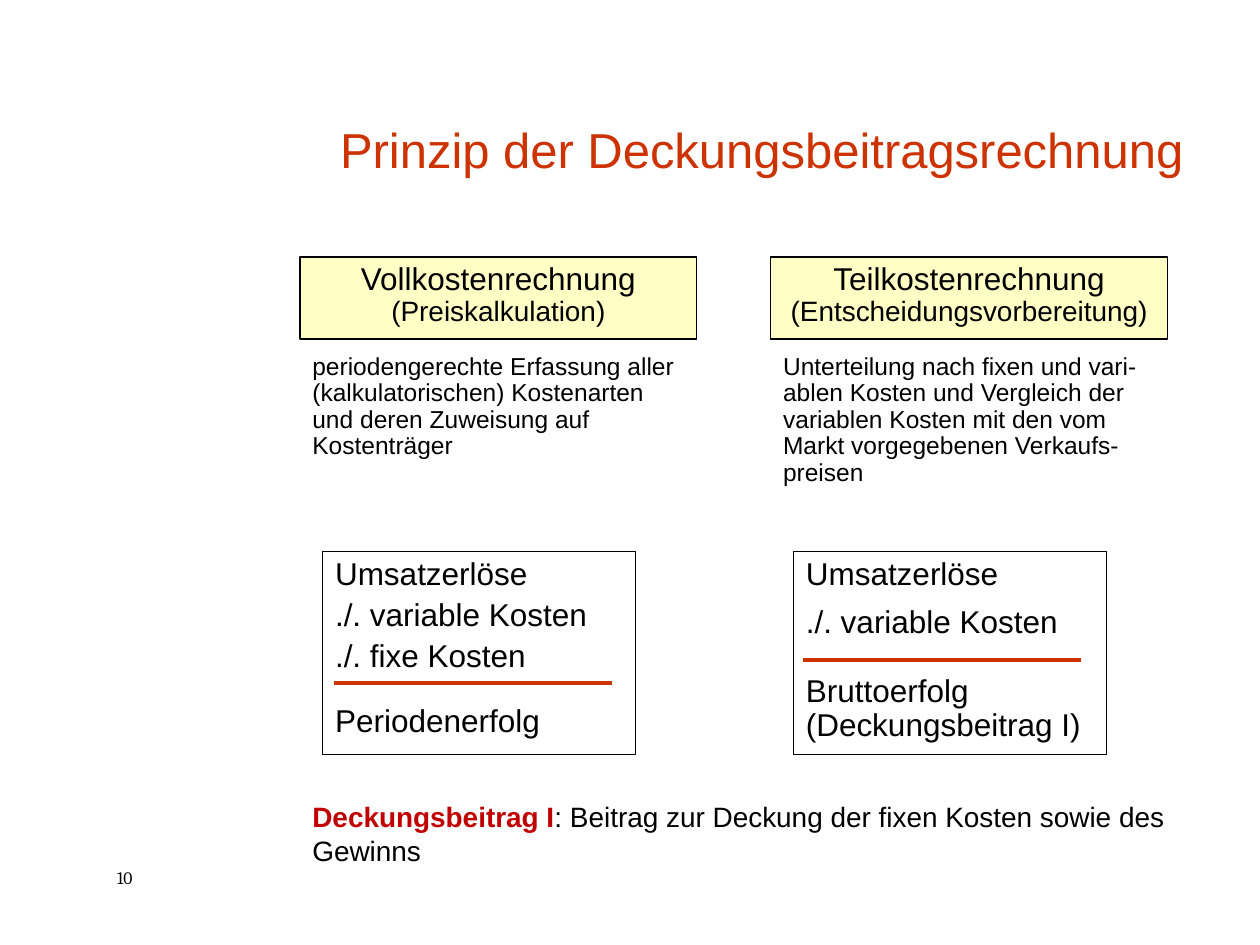
import pptx
import pptx.util
import pptx.dml.color
import pptx.enum.shapes
import pptx.enum.text
import lxml.etree
from dataclasses import dataclass

Pt = pptx.util.Pt
ALIGN = pptx.enum.text.PP_ALIGN
ANCHOR = pptx.enum.text.MSO_ANCHOR


@dataclass(frozen=True)
class Theme:
    font: str = "Arial"
    number_font: str = "Cambria"
    black: str = "000000"
    accent: str = "CC3300"
    term: str = "C00000"
    header_fill: str = "FFFFC5"
    title_size: int = 28
    large: int = 18
    medium: int = 16
    body: int = 14
    small: int = 10


THEME = Theme()

# Content
TITLE = "Prinzip der Deckungsbeitragsrechnung"
PAGE_NUMBER = "10"
COLUMNS = [
    {
        "heading": "Vollkostenrechnung",
        "purpose": "(Preiskalkulation)",
        "description": "periodengerechte Erfassung aller (kalkulatorischen) Kostenarten "
                       "und deren Zuweisung auf Kostenträger",
        "scheme": ["Umsatzerlöse", "./. variable Kosten", "./. fixe Kosten", "Periodenerfolg"],
        "gaps": [0, 4.2, 4.2, 17.4],
        "rule_left": 190.8, "rule_top": 390.2,
    },
    {
        "heading": "Teilkostenrechnung",
        "purpose": "(Entscheidungsvorbereitung)",
        "description": "Unterteilung nach fixen und vari-ablen Kosten und Vergleich der "
                       "variablen Kosten mit den vom Markt vorgegebenen Verkaufs-preisen",
        "scheme": ["Umsatzerlöse", "./. variable Kosten", "Bruttoerfolg (Deckungsbeitrag I)"],
        "gaps": [0, 8.3, 19.7],
        "rule_left": 458.8, "rule_top": 377.3,
    },
]
TERM = "Deckungsbeitrag I"
DEFINITION = ": Beitrag zur Deckung der fixen Kosten sowie des Gewinns"

# Column grid
COLUMN_LEFT, COLUMN_STEP, COLUMN_WIDTH = 171.4, 269, 226.8
SCHEME_INDENT, SCHEME_WIDTH, RULE_WIDTH = 13, 178.8, 159


def color(value):
    return pptx.dml.color.RGBColor.from_string(value)


def write(shape, paragraphs, size=THEME.body, font=THEME.font, align=ALIGN.LEFT,
          anchor=ANCHOR.TOP, line_spacing=1.0, gaps=None):
    """Each paragraph is a string or a list of (text, format) runs; "\\n" breaks a line."""
    frame = shape.text_frame
    frame.word_wrap = True
    frame.vertical_anchor = anchor
    frame.margin_left = frame.margin_right = Pt(7.2)
    frame.margin_top = frame.margin_bottom = Pt(3.6)
    for index, runs in enumerate(paragraphs):
        paragraph = frame.paragraphs[0] if index == 0 else frame.add_paragraph()
        paragraph.alignment = align
        paragraph.line_spacing = line_spacing
        paragraph.space_before = Pt(gaps[index] if gaps else 0)
        for text, style in [(runs, {})] if isinstance(runs, str) else runs:
            if text == "\n":
                paragraph.add_line_break()
                continue
            run = paragraph.add_run()
            run.text = text
            run.font.name = font
            run.font.size = Pt(style.get("size", size))
            run.font.bold = style.get("bold", False)
            run.font.color.rgb = color(style.get("color", THEME.black))


def add_text(slide, box, paragraphs, **style):
    write(slide.shapes.add_textbox(*map(Pt, box)), paragraphs, **style)


def add_box(slide, box, paragraphs, fill=None, **style):
    shape = slide.shapes.add_shape(pptx.enum.shapes.MSO_SHAPE.RECTANGLE, *map(Pt, box))
    shape.shadow.inherit = False
    if fill:
        shape.fill.solid()
        shape.fill.fore_color.rgb = color(fill)
    else:
        shape.fill.background()
    shape.line.color.rgb = color(THEME.black)
    shape.line.width = Pt(0.75)
    write(shape, paragraphs, **style)


def add_rule(slide, left, top):
    rule = slide.shapes.add_connector(
        pptx.enum.shapes.MSO_CONNECTOR.STRAIGHT, Pt(left), Pt(top), Pt(left + RULE_WIDTH), Pt(top))
    rule.line.color.rgb = color(THEME.accent)
    rule.line.width = Pt(2)
    properties = rule.line._get_or_add_ln().getparent()
    lxml.etree.SubElement(properties, pptx.oxml.ns.qn("a:effectLst"))


def add_column(slide, column, left):
    heading = [(column["heading"], {"size": THEME.large}), ("\n", {}), (column["purpose"], {})]
    add_box(slide, (left, 146.9, COLUMN_WIDTH, 46.8), [heading], fill=THEME.header_fill,
            size=THEME.medium, align=ALIGN.CENTER, line_spacing=0.9)
    add_text(slide, (left, 198.7, COLUMN_WIDTH, 108.7), [column["description"]],
             line_spacing=0.9)
    add_box(slide, (left + SCHEME_INDENT, 315.3, SCHEME_WIDTH, 116), column["scheme"],
            size=THEME.large, line_spacing=0.9, gaps=column["gaps"])
    add_rule(slide, column["rule_left"], column["rule_top"])


def main():
    presentation = pptx.Presentation()
    presentation.slide_width, presentation.slide_height = Pt(720), Pt(540)
    slide = presentation.slides.add_slide(presentation.slide_layouts[5])

    # Title
    title = slide.shapes.title
    title.left, title.top, title.width, title.height = map(Pt, (150.5, 30.2, 532.8, 75.6))
    write(title, [[(TITLE, {"color": THEME.accent})]], size=THEME.title_size,
          align=ALIGN.RIGHT, anchor=ANCHOR.BOTTOM)

    # Two costing methods side by side
    for index, column in enumerate(COLUMNS):
        add_column(slide, column, COLUMN_LEFT + index * COLUMN_STEP)

    # Definition and page number
    add_text(slide, (COLUMN_LEFT, 453.6, 519, 46),
             [[(TERM, {"bold": True, "color": THEME.term}), (DEFINITION, {})]],
             size=THEME.medium)
    add_text(slide, (59.8, 491.8, 48.2, 19.4), [PAGE_NUMBER],
             size=THEME.small, font=THEME.number_font)

    presentation.save("out.pptx")


if __name__ == "__main__":
    main()
